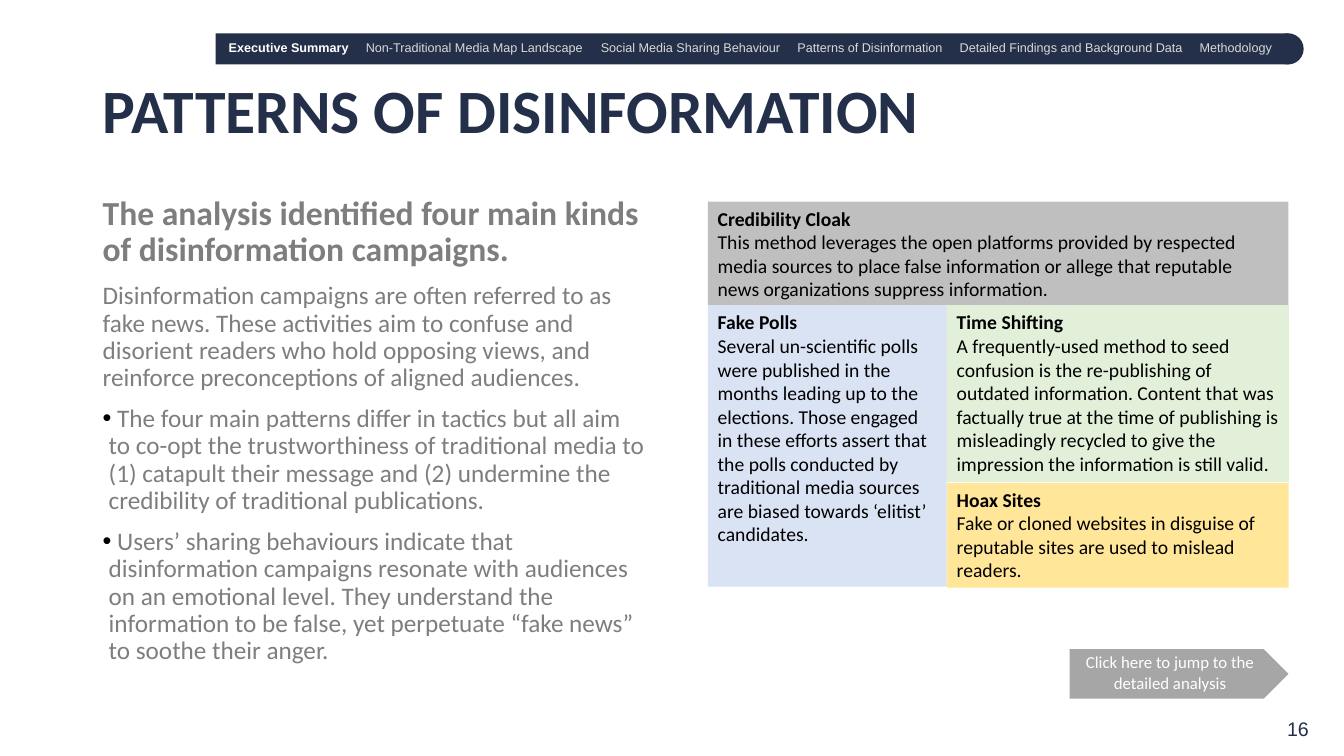
from lxml import etree
from pptx import Presentation
from pptx.dml.color import RGBColor
from pptx.enum.shapes import MSO_SHAPE as Preset
from pptx.enum.text import MSO_ANCHOR as Anchor, PP_ALIGN as Align
from pptx.oxml.ns import qn
from pptx.util import Inches, Pt

NAVY = RGBColor(0x24, 0x30, 0x49)
BODY_GREY = RGBColor(0x7E, 0x7E, 0x7E)
NAV_GREY = RGBColor(0xD9, 0xD9, 0xD9)
CLOAK_GREY = RGBColor(0xBF, 0xBF, 0xBF)
BUTTON_GREY = RGBColor(0xA6, 0xA6, 0xA6)
GREEN = RGBColor(0xE2, 0xF0, 0xD9)
BLUE = RGBColor(0xDA, 0xE3, 0xF3)
YELLOW = RGBColor(0xFF, 0xE6, 0x99)
BLACK = RGBColor(0, 0, 0)
WHITE = RGBColor(0xFF, 0xFF, 0xFF)

TITLE = "PATTERNS OF DISINFORMATION"
PAGE_NUMBER = "16"
BUTTON = "Click here to jump to the detailed analysis"

# Section name and its tab stop in inches from the start of the line
SECTIONS = [
    ("Executive Summary", 0),
    ("Non-Traditional Media Map Landscape", 1.36),
    ("Social Media Sharing Behaviour", 3.69),
    ("Patterns of Disinformation", 5.64),
    ("Detailed Findings and Background Data", 7.25),
    ("Methodology", 9.63),
]

HEADLINE = "The analysis identified four main kinds of disinformation campaigns."
INTRO = (
    "Disinformation campaigns are often referred to as fake news. These activities aim to "
    "confuse and disorient readers who hold opposing views, and reinforce preconceptions "
    "of aligned audiences."
)
BULLETS = [
    " The four main patterns differ in tactics but all aim to co-opt the trustworthiness of "
    "traditional media to (1) catapult their message and (2) undermine the credibility of "
    "traditional publications.",
    " Users’ sharing behaviours indicate that disinformation campaigns resonate with audiences "
    "on an emotional level. They understand the information to be false, yet perpetuate "
    "“fake news” to soothe their anger.",
]

# Edges of the pattern tiles
LEFT, MIDDLE, RIGHT = 7.02, 9.39, 12.78
TOP, SECOND_ROW, HOAX_TOP, BOTTOM = 2, 3.03, 4.79, 5.82
TILES = [
    ("Credibility Cloak",
     "This method leverages the open platforms provided by respected media sources to place "
     "false information or allege that reputable news organizations suppress information.",
     CLOAK_GREY, (LEFT, TOP, RIGHT, SECOND_ROW)),
    ("Time Shifting",
     "A frequently-used method to seed confusion is the re-publishing of outdated information. "
     "Content that was factually true at the time of publishing is misleadingly recycled to "
     "give the impression the information is still valid.",
     GREEN, (MIDDLE, SECOND_ROW, RIGHT, HOAX_TOP - 0.01)),
    ("Fake Polls",
     "Several un-scientific polls were published in the months leading up to the elections. "
     "Those engaged in these efforts assert that the polls conducted by traditional media "
     "sources are biased towards ‘elitist’ candidates.",
     BLUE, (LEFT, SECOND_ROW, MIDDLE, BOTTOM)),
    ("Hoax Sites",
     "Fake or cloned websites in disguise of reputable sites are used to mislead readers.",
     YELLOW, (MIDDLE, HOAX_TOP, RIGHT, BOTTOM + 0.01)),
]


def add_filled(preset, place, color):
    shape = slide.shapes.add_shape(preset, *map(Inches, place))
    shape.shadow.inherit = False
    shape.fill.solid()
    shape.fill.fore_color.rgb = color
    shape.line.fill.background()
    return shape


def add_text_box(place, anchor=Anchor.TOP, inset=0.05):
    """Add a wrapping text box with the given top and bottom inset; return its frame."""
    frame = slide.shapes.add_textbox(*map(Inches, place)).text_frame
    frame.word_wrap = True
    frame.vertical_anchor = anchor
    frame.margin_top = frame.margin_bottom = Inches(inset)
    return frame


def next_paragraph(frame):
    """Return the still empty first paragraph, or add one."""
    first = frame.paragraphs[0]
    return frame.add_paragraph() if first.runs else first


def add_span(para, text, size, color, bold=False, font="Calibri"):
    span = para.add_run()
    span.text = text
    span.font.size = Pt(size)
    span.font.name = font
    span.font.bold = bold
    span.font.color.rgb = color


def add_body_paragraph(frame, text, size=18, bold=False, bullet=False):
    para = next_paragraph(frame)
    para.line_spacing = 0.9
    if para is not frame.paragraphs[0] and frame.paragraphs[0].runs:
        para.space_before = Pt(10)
    properties = para._p.get_or_add_pPr()
    properties.set("marL", str(Inches(0.25 if bullet else 0.19)))
    properties.set("indent", str(Inches(-0.06 if bullet else 0)))
    if bullet:
        color = etree.SubElement(properties, qn("a:buClr"))
        etree.SubElement(color, qn("a:srgbClr"), val=str(BLACK))
        etree.SubElement(properties, qn("a:buFont"), typeface="Arial")
        etree.SubElement(properties, qn("a:buChar"), char="•")
    add_span(para, text, size, BODY_GREY, bold)


deck = Presentation()
deck.slide_width, deck.slide_height = Inches(13.33), Inches(7.5)
slide = deck.slides.add_slide(deck.slide_layouts[6])

# Navigation bar
add_filled(Preset.RECTANGLE, (2.14, 0.33, 10.64, 0.31), NAVY)
add_filled(Preset.OVAL, (12.62, 0.33, 0.31, 0.31), NAVY)
nav = add_text_box((2.17, 0.34, 10.71, 0.27), Anchor.MIDDLE).paragraphs[0]
tabs = etree.SubElement(nav._p.get_or_add_pPr(), qn("a:tabLst"))
for index, (section, stop) in enumerate(SECTIONS):
    if index:
        etree.SubElement(tabs, qn("a:tab"), pos=str(Inches(stop)), algn="l")
    current = index == 0
    add_span(nav, section if current else "\t" + section, 9,
             WHITE if current else NAV_GREY, current, "Arial")

# Title and page number
title = add_text_box((0.92, 0.4, 11.5, 1.45), Anchor.MIDDLE, 0.1).paragraphs[0]
title.line_spacing = 0.9
add_span(title, TITLE, 44, NAVY, True)
number = add_text_box((11.9, 7.06, 1.18, 0.34)).paragraphs[0]
number.alignment = Align.RIGHT
add_span(number, PAGE_NUMBER, 14, NAVY, font="Arial")

# Main text
body = add_text_box((0.73, 1.85, 5.79, 4.76), inset=0.1)
add_body_paragraph(body, HEADLINE, 24, True)
add_body_paragraph(body, INTRO)
for bullet_text in BULLETS:
    add_body_paragraph(body, bullet_text, bullet=True)

# Pattern tiles
for name, description, color, (left, top, right, bottom) in TILES:
    tile = add_filled(Preset.RECTANGLE, (left, top, right - left, bottom - top), color)
    if color == GREEN:
        tile.line.color.rgb = GREEN
        tile.line.width = Pt(0.75)
    frame = tile.text_frame
    frame.word_wrap = True
    frame.vertical_anchor = Anchor.TOP
    for text, bold in ((name, True), (description, False)):
        para = next_paragraph(frame)
        para.alignment = Align.LEFT
        add_span(para, text, 14, BLACK, bold)

# Jump button
add_filled(Preset.PENTAGON, (10.61, 6.44, 2.17, 0.49), BUTTON_GREY)
label = add_text_box((10.52, 6.42, 2.17, 0.5)).paragraphs[0]
label.alignment = Align.CENTER
add_span(label, BUTTON, 12, WHITE)

deck.save("out.pptx")
